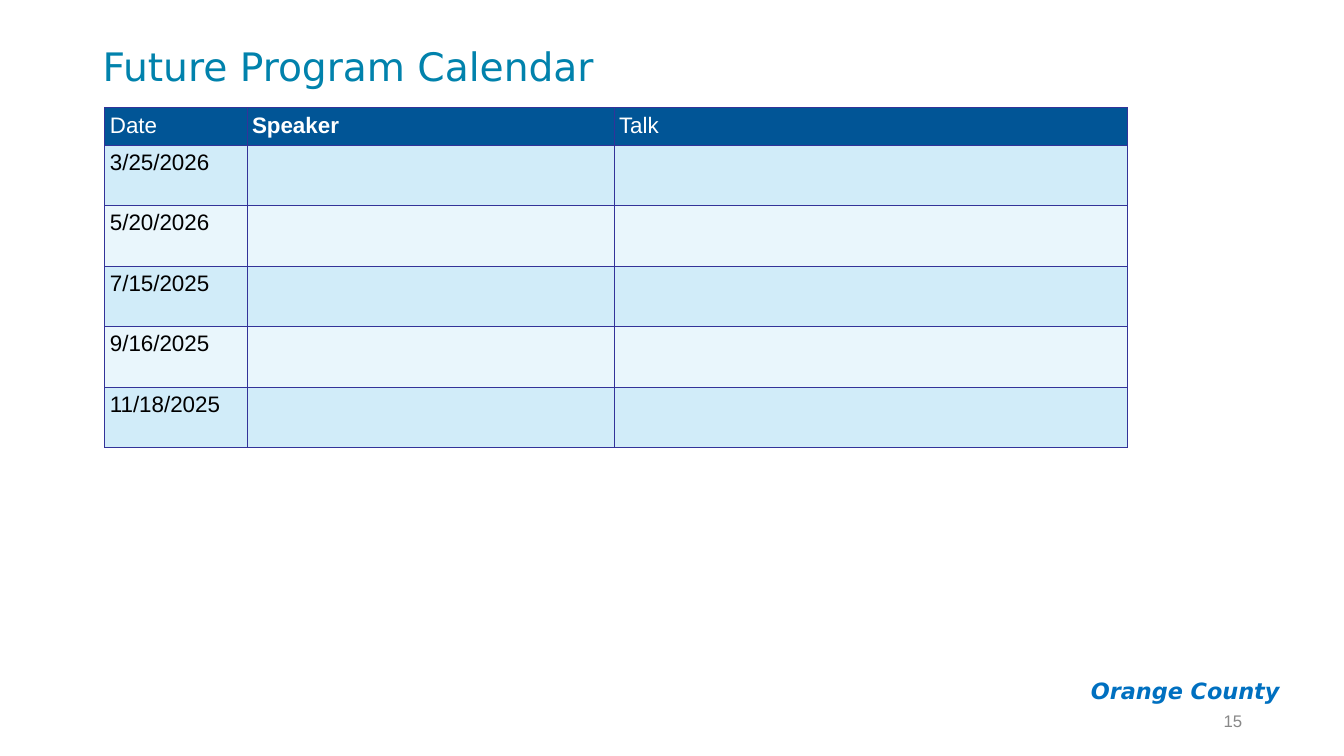
from lxml import etree
from pptx import Presentation
from pptx import util as u
from pptx.dml.color import RGBColor
from pptx.enum import text
from pptx.oxml import ns

TEAL = RGBColor(0x01, 0x82, 0xAC)
BRAND_BLUE = RGBColor(0x00, 0x70, 0xC0)
GRAY = RGBColor(0x88, 0x88, 0x88)
WHITE = RGBColor(0xFF, 0xFF, 0xFF)
BLACK = RGBColor(0x00, 0x00, 0x00)
HEADER_FILL = RGBColor(0x01, 0x55, 0x96)
BAND_FILLS = (RGBColor(0xD1, 0xEC, 0xF9), RGBColor(0xE9, 0xF6, 0xFC))
BORDER = RGBColor(0x33, 0x33, 0x99)

HEADINGS = ("Date", "Speaker", "Talk")
DATES = ("3/25/2026", "5/20/2026", "7/15/2025", "9/16/2025", "11/18/2025")
COLUMN_WIDTHS = (1.41, 3.64, 5.09)
HEADER_HEIGHT, ROW_HEIGHT = 0.37, 0.6


def write(paragraph, words, color, **font_format):
    """Add one run and apply its font values."""
    run = paragraph.add_run()
    run.text = words
    run.font.color.rgb = color
    for name, value in font_format.items():
        setattr(run.font, name, value)


def add_label(slide, box, words, color, frame_format, paragraph_format, **font_format):
    shape = slide.shapes.add_textbox(*(u.Inches(length) for length in box))
    frame = shape.text_frame
    frame.word_wrap = True
    paragraph = frame.paragraphs[0]
    for target, values in ((frame, frame_format), (paragraph, paragraph_format)):
        for name, value in values.items():
            setattr(target, name, value)
    write(paragraph, words, color, **font_format)


def add_borders(cell):
    properties = cell._tc.get_or_add_tcPr()
    for side in ("lnL", "lnR", "lnT", "lnB"):
        line = etree.SubElement(properties, ns.qn(f"a:{side}"), w=str(u.Pt(0.75)))
        fill = etree.SubElement(line, ns.qn("a:solidFill"))
        etree.SubElement(fill, ns.qn("a:srgbClr"), val=str(BORDER))


def format_cell(cell, fill_color):
    add_borders(cell)
    cell.fill.solid()
    cell.fill.fore_color.rgb = fill_color
    for side in ("left", "right", "top", "bottom"):
        setattr(cell, f"margin_{side}", u.Inches(0.05))


def add_calendar(slide, left, top):
    rows = [HEADINGS] + [(date, "", "") for date in DATES]
    heights = [HEADER_HEIGHT] + [ROW_HEIGHT] * len(DATES)
    table = slide.shapes.add_table(
        len(rows), len(HEADINGS), u.Inches(left), u.Inches(top),
        u.Inches(sum(COLUMN_WIDTHS)), u.Inches(sum(heights))).table
    for column, width in zip(table.columns, COLUMN_WIDTHS):
        column.width = u.Inches(width)

    for row_index, (row, height) in enumerate(zip(rows, heights)):
        table.rows[row_index].height = u.Inches(height)
        is_header = row_index == 0
        fill_color = HEADER_FILL if is_header else BAND_FILLS[(row_index - 1) % 2]
        for column_index, words in enumerate(row):
            cell = table.cell(row_index, column_index)
            format_cell(cell, fill_color)
            if words:
                write(cell.text_frame.paragraphs[0], words,
                      WHITE if is_header else BLACK,
                      name="Arial", size=u.Pt(16), bold=words == "Speaker")


def main():
    presentation = Presentation()
    presentation.slide_width = u.Inches(13.33)
    presentation.slide_height = u.Inches(7.5)
    slide = presentation.slides.add_slide(presentation.slide_layouts[6])
    middle = {"vertical_anchor": text.MSO_ANCHOR.MIDDLE}
    right = {"alignment": text.PP_ALIGN.RIGHT}

    # Chapter name
    add_label(slide, (10.51, 6.62, 2.28, 0.47), "Orange County", BRAND_BLUE,
              {"margin_top": u.Inches(0.1), "margin_bottom": u.Inches(0.1)}, right,
              name="DejaVu Sans", size=u.Pt(16), bold=True, italic=True)

    # Title
    add_label(slide, (0.92, 0.29, 11.5, 0.78), "Future Program Calendar", TEAL,
              middle, {"line_spacing": 0.9}, name="DejaVu Sans", size=u.Pt(28))

    # Page number
    add_label(slide, (9.42, 6.95, 3, 0.4), "15", GRAY, middle, right,
              name="Arial", size=u.Pt(12))

    # Program dates
    add_calendar(slide, 1.04, 1.07)

    presentation.save("out.pptx")


if __name__ == "__main__":
    main()
